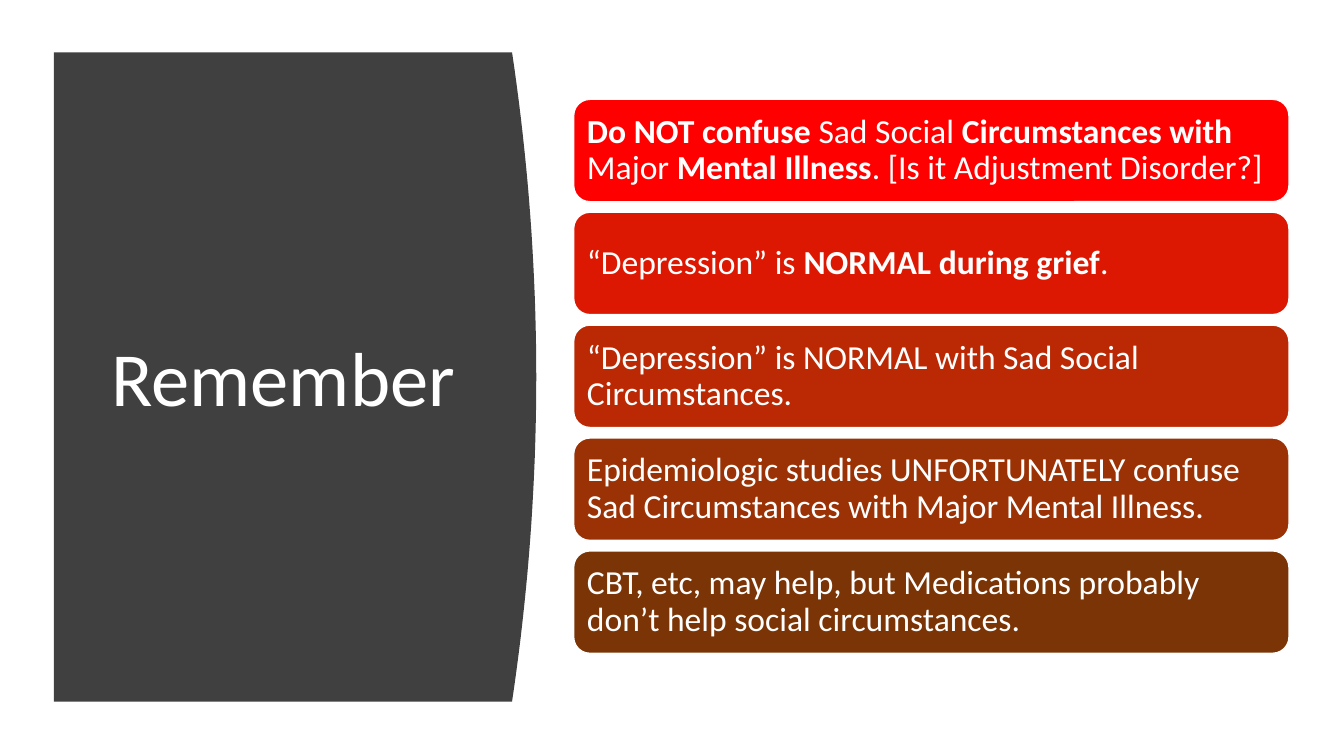
from dataclasses import dataclass

from pptx import Presentation
from pptx import util as u
from pptx.dml.color import RGBColor
from pptx.enum import shapes, text


@dataclass(frozen=True)
class Theme:
    """Colours, font and type sizes of the slide."""
    font: str = "Calibri"
    title_size: int = 41
    point_size: int = 18
    light: str = "FFFFFF"
    panel: str = "404040"
    cards: tuple = ("FF0000", "DD1802", "BB2904", "9A3205", "7A3405")


THEME = Theme()
REMINDERS = (
    "*Do NOT confuse *Sad Social *Circumstances with* Major *Mental Illness*. [Is it Adjustment Disorder?]",
    "“Depression” is *NORMAL during grief*.",
    "“Depression” is NORMAL with Sad Social Circumstances.",
    "Epidemiologic studies UNFORTUNATELY confuse Sad Circumstances with Major Mental Illness.",
    "CBT, etc, may help, but Medications probably don’t help social circumstances.",
)


def format_run(run, size, bold=False):
    """Apply the theme font to a run."""
    run.font.name = THEME.font
    run.font.size = u.Pt(size)
    run.font.bold = bold
    run.font.color.rgb = RGBColor.from_string(THEME.light)


def fill_solid(shape, colour):
    """Give a shape a flat fill without a shadow."""
    shape.shadow.inherit = False
    shape.fill.solid()
    shape.fill.fore_color.rgb = RGBColor.from_string(colour)


def add_title_panel(slide, left, top, width, height, title_text):
    """Draw the panel with a bowed right edge and put the title on it."""
    bulge, steps = 0.18, 40
    side = left + width - bulge
    bow = [(side + 4 * bulge * t * (1 - t), top + height * t)
           for t in (step / steps for step in range(steps + 1))]
    outline = [(u.Inches(x), u.Inches(y)) for x, y in bow + [(left, top + height)]]
    builder = slide.shapes.build_freeform(u.Inches(left), u.Inches(top), scale=1.0)
    builder.add_line_segments(outline, close=True)
    panel = builder.convert_to_shape()
    fill_solid(panel, THEME.panel)
    panel.line.fill.background()

    title = slide.shapes.title
    slide.shapes._spTree.append(title._element)
    title.left, title.top = u.Inches(left + 0.31), u.Inches(top + 0.44)
    title.width, title.height = u.Inches(2.8), u.Inches(height - 0.9)
    frame = title.text_frame
    frame.text = title_text
    frame.vertical_anchor = text.MSO_ANCHOR.MIDDLE
    frame.paragraphs[0].alignment = text.PP_ALIGN.CENTER
    format_run(frame.paragraphs[0].runs[0], THEME.title_size)


def add_card(slide, left, top, width, height, colour, reminder):
    """Draw one rounded card; asterisks switch bold on and off."""
    card = slide.shapes.add_shape(
        shapes.MSO_SHAPE.ROUNDED_RECTANGLE,
        u.Inches(left), u.Inches(top), u.Inches(width), u.Inches(height))
    fill_solid(card, colour)
    card.line.color.rgb = RGBColor.from_string(THEME.light)
    card.line.width = u.Pt(2)
    frame = card.text_frame
    frame.word_wrap = True
    frame.vertical_anchor = text.MSO_ANCHOR.MIDDLE
    frame.margin_left = frame.margin_right = u.Inches(0.07)
    frame.margin_top = frame.margin_bottom = u.Inches(0.07)
    paragraph = frame.paragraphs[0]
    paragraph.alignment = text.PP_ALIGN.LEFT
    paragraph.line_spacing = 0.9
    for index, words in enumerate(reminder.split("*")):
        if words:
            run = paragraph.add_run()
            run.text = words
            format_run(run, THEME.point_size, bold=index % 2 == 1)


def add_reminders(slide, left, top, width, height, reminders):
    """Stack the reminder cards with equal gaps."""
    gap = 0.06
    card_height = (height - gap * (len(reminders) - 1)) / len(reminders)
    for row, (colour, reminder) in enumerate(zip(THEME.cards, reminders)):
        add_card(slide, left, top + row * (card_height + gap), width, card_height, colour, reminder)


def main():
    """Build and save the slide."""
    deck = Presentation()
    deck.slide_width = u.Inches(10)
    deck.slide_height = deck.slide_width * 9 // 16
    slide = deck.slides.add_slide(deck.slide_layouts[5])
    add_title_panel(slide, 0.4, 0.39, 3.59, 4.83, "Remember")
    add_reminders(slide, 4.26, 0.73, 5.34, 4.14, REMINDERS)
    deck.save("out.pptx")


if __name__ == "__main__":
    main()
